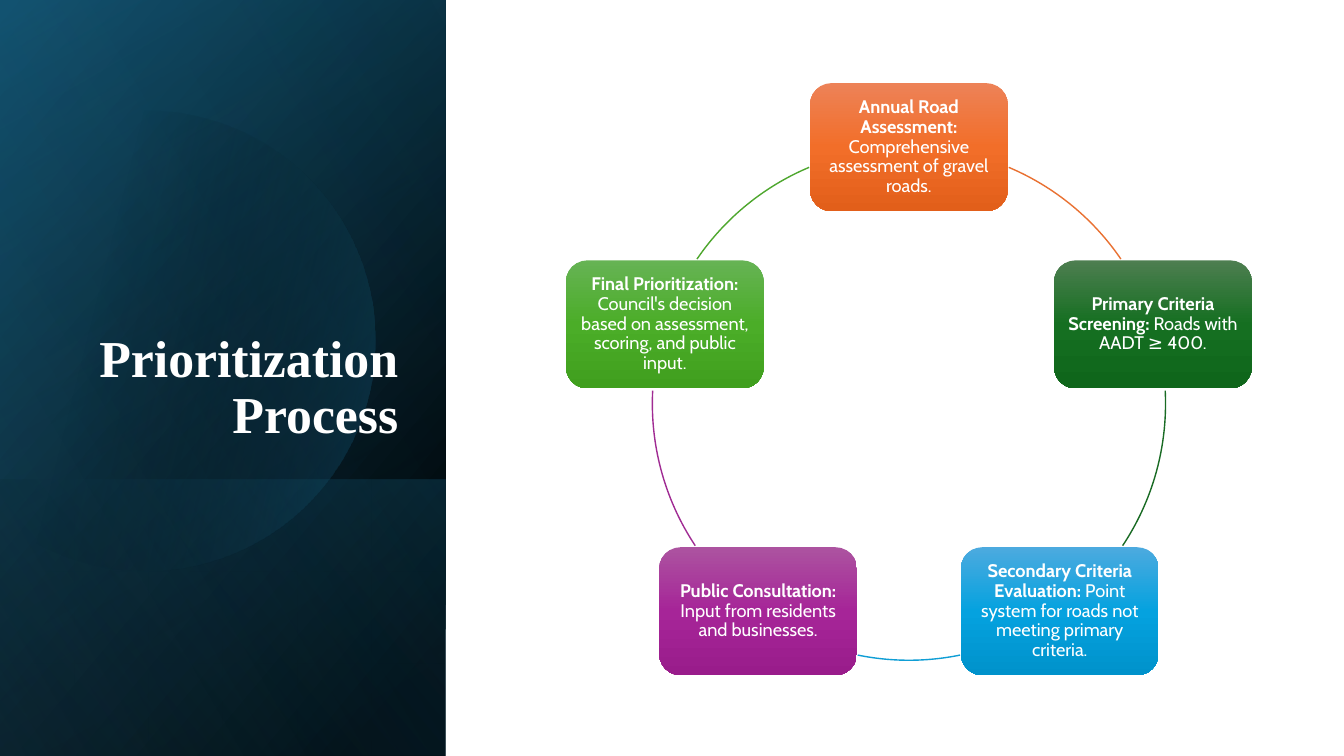
from math import acos, cos, degrees, pi, radians, sin

from lxml.etree import SubElement
from pptx import Presentation
from pptx.dml.color import RGBColor as RGB
from pptx.enum.shapes import MSO_SHAPE as SHAPE
from pptx.enum.text import MSO_ANCHOR as ANCHOR, MSO_AUTO_SIZE as AUTO, PP_ALIGN as ALIGN
from pptx.oxml.ns import qn
from pptx.util import Inches, Pt

COLORS = {
    "white": "FFFFFF", "black": "000000",
    "navy": "104862", "teal": "156082", "sky": "46B1E1",
}
STEP_COLORS = {
    "orange": ("E97132", "ED8257", "F26E29", "E25F1A"),
    "forest": ("196B24", "4D7E50", "156F21", "0F661B"),
    "blue": ("0F9ED5", "4CAADF", "05A2DF", "0092CB"),
    "purple": ("A02B93", "AC53A0", "A62598", "991C8B"),
    "green": ("4EA72E", "66B354", "4BAD28", "409F1E"),
}
STEPS = [
    ("orange", "Annual Road Assessment:", " Comprehensive assessment of gravel roads.", (292.9, 325.7)),
    ("forest", "Primary Criteria Screening:", " Roads with AADT ≥ 400.", (357.1, 33.6)),
    ("blue", "Secondary Criteria Evaluation:", " Point system for roads not meeting primary criteria.",
     (78.5, 101.5)),
    ("purple", "Public Consultation:", " Input from residents and businesses.", (146.4, 182.9)),
    ("green", "Final Prioritization:", " Council's decision based on assessment, scoring, and public input.",
     (214.3, 247.1)),
]
FRAME = {"word_wrap": True, "auto_size": AUTO.NONE}
INSETS = {f"margin_{side}": Inches(0.05) for side in ("left", "top", "right", "bottom")}
TITLE_FONT = {"name": "Times New Roman", "size": Pt(37), "bold": True}
STEP_FONT = {"name": "Cabin", "size": Pt(13)}


def set_attrs(target, values):
    """Set every attribute in a dict on the target."""
    for name, value in values.items():
        setattr(target, name, value)


def add_run(p, text, font, **extra):
    """Add a white run with the given font values."""
    r = p.add_run()
    r.text = text
    set_attrs(r.font, {**font, **extra})
    r.font.color.rgb = RGB.from_string(COLORS["white"])


def fill_gradient(sp, stops, angle):
    """Fill a shape with (position, hex, alpha) stops along an angle."""
    sp.shadow.inherit = False
    sp.line.fill.background()
    sp.fill.background()
    sp_pr = sp.element.spPr
    grad = SubElement(sp_pr, qn("a:gradFill"), rotWithShape="1")
    gs_list = SubElement(grad, qn("a:gsLst"))
    for pos, color, alpha in stops:
        gs = SubElement(gs_list, qn("a:gs"), pos=str(pos * 1000))
        clr = SubElement(gs, qn("a:srgbClr"), val=color)
        if alpha < 100:
            SubElement(clr, qn("a:alpha"), val=str(alpha * 1000))
    SubElement(grad, qn("a:lin"), ang=str(angle * 60000), scaled="0")
    sp_pr.replace(sp_pr.find(qn("a:noFill")), grad)


def add_wash(s, x, y, w, h, stops, angle):
    """Add a mirrored quarter-turned gradient rectangle covering the given box."""
    left, top = x + (w - h) / 2, y + (h - w) / 2
    sp = s.shapes.add_shape(SHAPE.RECTANGLE, Inches(left), Inches(top), Inches(h), Inches(w))
    sp.rotation = 90
    sp.element.spPr.find(qn("a:xfrm")).set("flipH", "1")
    fill_gradient(sp, stops, angle)


def add_disc(s, x, cx, cy, radius):
    """Add a gradient disc cut off at the left edge x."""
    reach = degrees(acos((x - cx) / radius))
    angles = [radians(-reach + 2 * reach * i / 120) for i in range(121)]
    points = [(Inches(cx + radius * cos(a)), Inches(cy + radius * sin(a))) for a in angles]
    builder = s.shapes.build_freeform(*points[0])
    builder.add_line_segments(points[1:])
    fill_gradient(builder.convert_to_shape(),
                  [(29, COLORS["black"], 0), (100, COLORS["teal"], 43)], 14)


def add_title_panel(s, x, y, w, h):
    """Build the dark panel and its title in the given box."""
    black, navy, teal, sky = (COLORS[n] for n in ("black", "navy", "teal", "sky"))
    add_wash(s, x, y, w, h, [(8, black, 100), (100, navy, 100)], 50)
    add_wash(s, x, y, w, h, [(0, black, 0), (99, teal, 46)], 30)
    add_wash(s, x, y + h - 2.74, w, 2.74, [(2, teal, 29), (100, black, 30)], 130)
    add_disc(s, x, x + 1.44, y + 3.38, 2.28)
    add_wash(s, x, y, w, h, [(0, black, 0), (99, sky, 11)], 120)

    title = s.shapes.title
    set_attrs(title, {"left": Inches(x + 0.64), "top": Inches(y + 1.84),
                      "width": Inches(3.41), "height": Inches(2.62)})
    tf = title.text_frame
    set_attrs(tf, {**FRAME, "vertical_anchor": ANCHOR.BOTTOM})
    p = tf.paragraphs[0]
    set_attrs(p, {"alignment": ALIGN.RIGHT, "line_spacing": 0.9})
    add_run(p, "Prioritization Process", TITLE_FONT)
    s.shapes._spTree.append(title.element)


def add_step(s, cx, cy, w, h, shades, heading, detail):
    """Add one rounded step box centred on a point."""
    sp = s.shapes.add_shape(SHAPE.ROUNDED_RECTANGLE, Inches(cx - w / 2), Inches(cy - h / 2),
                            Inches(w), Inches(h))
    fill_gradient(sp, [(pos, c, 100) for pos, c in zip((0, 50, 100), shades)], 90)
    tf = sp.text_frame
    set_attrs(tf, {**FRAME, **INSETS, "vertical_anchor": ANCHOR.MIDDLE})
    p = tf.paragraphs[0]
    set_attrs(p, {"alignment": ALIGN.CENTER, "line_spacing": 0.9})
    add_run(p, heading, STEP_FONT, bold=True)
    add_run(p, detail, STEP_FONT, bold=False)


def add_arc(s, x, y, size, color, span):
    """Add a clockwise arc of the ring between two angles in degrees."""
    sp = s.shapes.add_shape(SHAPE.ARC, Inches(x), Inches(y), Inches(size), Inches(size))
    for i, angle in enumerate(span):
        sp.adjustments[i] = angle * 0.6
    sp.shadow.inherit = False
    sp.fill.background()
    sp.line.color.rgb = RGB.from_string(color)
    sp.line.width = Pt(1)


def add_cycle(s, x, y, size):
    """Place the steps evenly around a ring filling the given square."""
    radius = size / 2
    for i, (color, heading, detail, span) in enumerate(STEPS):
        turn = 2 * pi * i / len(STEPS)
        line, *shades = STEP_COLORS[color]
        add_step(s, x + radius + radius * sin(turn), y + radius - radius * cos(turn),
                 1.96, 1.27, shades, heading, detail)
        add_arc(s, x, y, size, line, span)


def main():
    """Build and save the slide."""
    prs = Presentation()
    set_attrs(prs, {"slide_width": Inches(13.33), "slide_height": Inches(7.5)})
    s = prs.slides.add_slide(prs.slide_layouts[5])
    add_title_panel(s, 0, 0, 4.42, 7.5)
    add_cycle(s, 6.47, 1.46, 5.09)
    prs.save("out.pptx")


if __name__ == "__main__":
    main()
